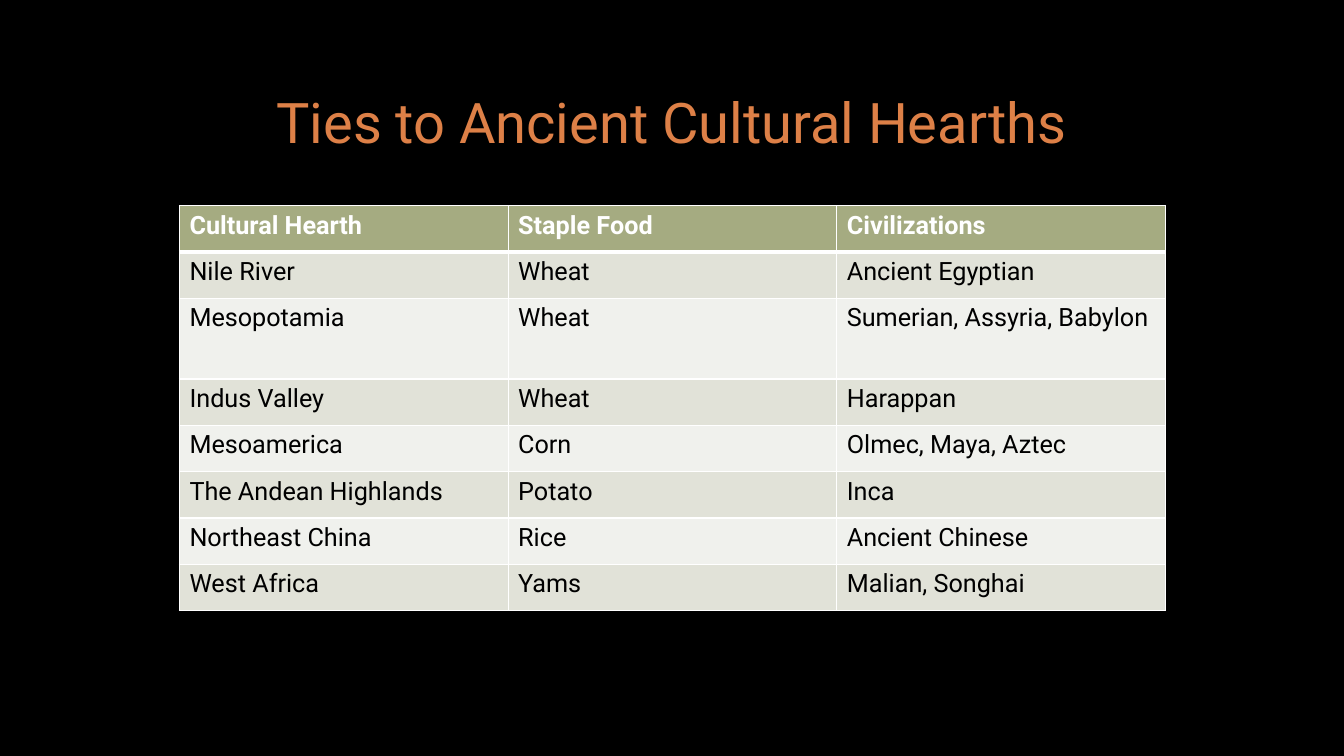
from dataclasses import dataclass

from lxml import etree
from pptx import Presentation
from pptx.dml.color import RGBColor
from pptx.enum.text import MSO_ANCHOR, PP_ALIGN
from pptx.oxml.ns import qn
from pptx.util import Inches, Pt

CENTER = PP_ALIGN.CENTER
MIDDLE = MSO_ANCHOR.MIDDLE
BLANK_LAYOUT = 6


@dataclass(frozen=True)
class Theme:
    font: str = "Roboto"
    title_size: int = 40
    cell_size: int = 18
    background: str = "000000"
    title: str = "DD8047"
    title_outline: str = "404040"
    header_fill: str = "A5AB81"
    header_text: str = "FFFFFF"
    body_text: str = "000000"
    bands: tuple = ("E1E2D8", "F0F1ED")
    border: str = "FFFFFF"
    thin: float = 1
    thick: float = 3


def rgb(value):
    return RGBColor.from_string(value)


def make_line(tag, color, width, opacity=100):
    """Return a solid DrawingML line; width in points, opacity in percent."""
    ln = etree.Element(qn(tag), w=str(int(Pt(width))))
    fill = etree.SubElement(ln, qn("a:solidFill"))
    clr = etree.SubElement(fill, qn("a:srgbClr"), val=color)
    if opacity < 100:
        etree.SubElement(clr, qn("a:alpha"), val=str(opacity * 1000))
    return ln


class SlideBuilder:
    def __init__(self, prs, theme):
        self.theme = theme
        self.s = prs.slides.add_slide(prs.slide_layouts[BLANK_LAYOUT])
        fill = self.s.background.fill
        fill.solid()
        fill.fore_color.rgb = rgb(theme.background)

    def style(self, p, size, color, bold=False):
        p.font.name = self.theme.font
        p.font.size = Pt(size)
        p.font.bold = bold
        p.font.color.rgb = rgb(color)

    def title(self, text, left, top, width, height):
        t = self.theme
        sp = self.s.shapes.add_textbox(
            Inches(left), Inches(top), Inches(width), Inches(height))
        tf = sp.text_frame
        tf.word_wrap = True
        tf.vertical_anchor = MIDDLE
        p = tf.paragraphs[0]
        p.alignment = CENTER
        r = p.add_run()
        r.text = text
        self.style(p, t.title_size, t.title)
        # Faint outline around the letters
        outline = make_line("a:ln", t.title_outline, 0.75, opacity=10)
        r.font.color.rgb = rgb(t.title)
        r.font.fill.fore_color.rgb = rgb(t.title)
        r._r.get_or_add_rPr().insert(0, outline)

    def cell(self, cell, text, row):
        t = self.theme
        header = row == 0
        # Borders: a thick rule separates the header from the body
        widths = {
            "a:lnL": t.thin,
            "a:lnR": t.thin,
            "a:lnT": t.thick if row == 1 else t.thin,
            "a:lnB": t.thick if header else t.thin,
        }
        tcPr = cell._tc.get_or_add_tcPr()
        for tag, width in widths.items():
            tcPr.append(make_line(tag, t.border, width))
        # Fill and text
        cell.fill.solid()
        band = t.bands[(row - 1) % len(t.bands)]
        cell.fill.fore_color.rgb = rgb(t.header_fill if header else band)
        cell.text = text
        self.style(cell.text_frame.paragraphs[0], t.cell_size,
                   t.header_text if header else t.body_text, bold=header)

    def table(self, rows, left, top, col_width, heights):
        cols = len(rows[0])
        table = self.s.shapes.add_table(
            len(rows), cols, Inches(left), Inches(top),
            Inches(col_width * cols), Inches(sum(heights))).table
        for column in table.columns:
            column.width = Inches(col_width)
        for i, (values, height) in enumerate(zip(rows, heights)):
            table.rows[i].height = Inches(height)
            for j, text in enumerate(values):
                self.cell(table.cell(i, j), text, i)


HEARTHS = [
    ("Cultural Hearth", "Staple Food", "Civilizations"),
    ("Nile River", "Wheat", "Ancient Egyptian"),
    ("Mesopotamia", "Wheat", "Sumerian, Assyria, Babylon"),
    ("Indus Valley", "Wheat", "Harappan"),
    ("Mesoamerica", "Corn", "Olmec, Maya, Aztec"),
    ("The Andean Highlands", "Potato", "Inca"),
    ("Northeast China", "Rice", "Ancient Chinese"),
    ("West Africa", "Yams", "Malian, Songhai"),
]
ROW_HEIGHT = 0.46
TALL_ROW_HEIGHT = 0.8


def main():
    prs = Presentation()
    prs.slide_width = Inches(13.33)
    prs.slide_height = Inches(7.5)
    slide = SlideBuilder(prs, Theme())

    # Title
    slide.title("Ties to Ancient Cultural Hearths", 1, 0.67, 11.32, 1.06)

    # Table of hearths, with a taller row for Mesopotamia
    heights = [TALL_ROW_HEIGHT if row[0] == "Mesopotamia" else ROW_HEIGHT
               for row in HEARTHS]
    slide.table(HEARTHS, 1.78, 2.04, 3.26, heights)

    prs.save("out.pptx")


if __name__ == "__main__":
    main()
